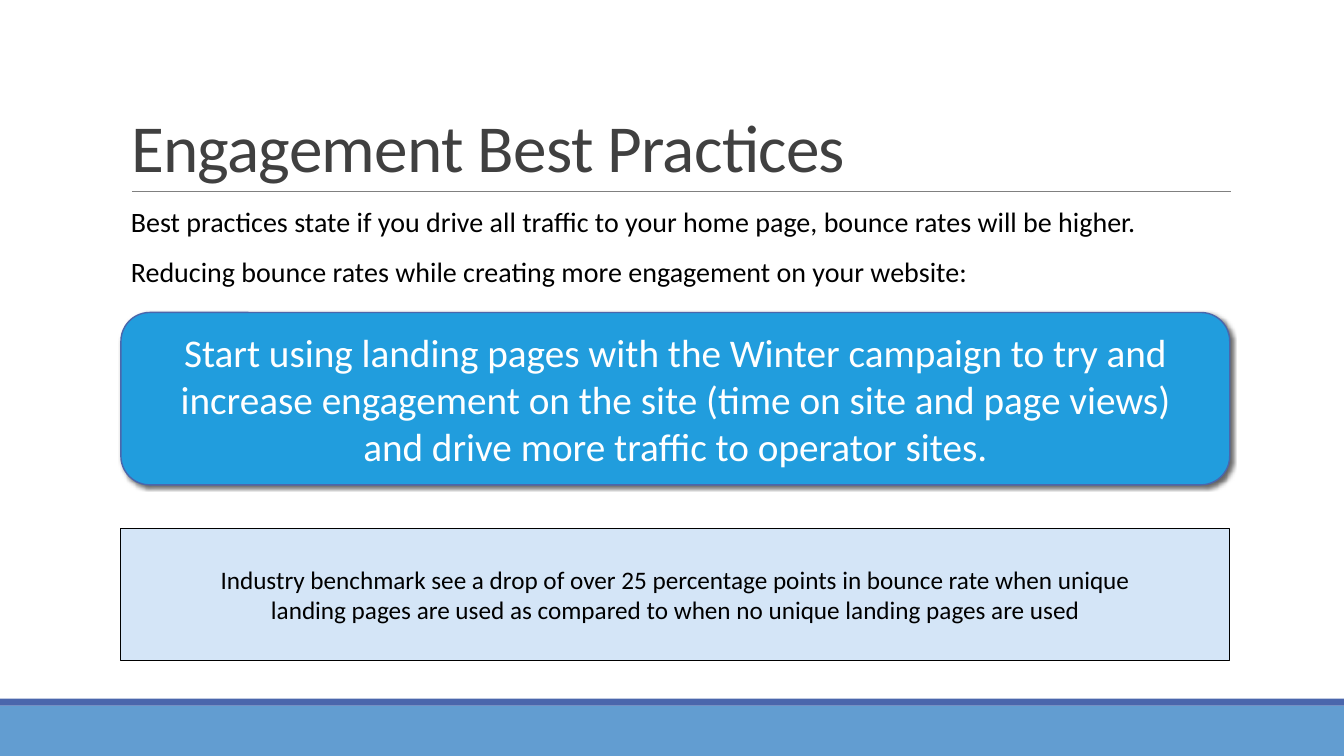
from dataclasses import dataclass, field

from lxml import etree
from pptx import Presentation
from pptx.dml.color import RGBColor
from pptx.enum import shapes, text
from pptx.oxml import ns
from pptx.util import Pt

FONT = "Calibri"
LEFT, WIDTH = 86.4, 792
SLIDE_WIDTH, SLIDE_HEIGHT = 960, 540
TITLE_ONLY_LAYOUT = 5


@dataclass
class TextBlock:
    paragraphs: list[str]
    size: float
    color: str
    frame: dict = field(default_factory=dict)
    paragraph: dict = field(default_factory=dict)


@dataclass
class Panel:
    preset: int
    left: float
    top: float
    width: float
    height: float
    fill: str
    line: str | None = None
    line_width: float = 0
    block: TextBlock | None = None


CENTERED = {"alignment": text.PP_ALIGN.CENTER}
MIDDLE = {"vertical_anchor": text.MSO_ANCHOR.MIDDLE}

TITLE = TextBlock(
    ["Engagement Best Practices"], 48, "404040",
    {"vertical_anchor": text.MSO_ANCHOR.BOTTOM},
    {"alignment": text.PP_ALIGN.LEFT, "line_spacing": 0.85},
)
INTRODUCTION = TextBlock(
    [
        "Best practices state if you drive all traffic to your home page, bounce rates will be higher.",
        "Reducing bounce rates while creating more engagement on your website:",
    ],
    20, "000000",
    {"vertical_anchor": text.MSO_ANCHOR.TOP},
    {"line_spacing": 0.9, "space_after": Pt(2)},
)
BENCHMARK = TextBlock(
    [
        "Industry benchmark see a drop of over 25 percentage points in bounce rate when unique "
        "landing pages are used as compared to when no unique landing pages are used"
    ],
    18, "000000",
    MIDDLE | {"margin_left": Pt(50), "margin_right": Pt(50)},
    CENTERED,
)
RECOMMENDATION = TextBlock(
    [
        "Start using landing pages with the Winter campaign to try and increase engagement on the site "
        "(time on site and page views) and drive more traffic to operator sites."
    ],
    28, "FFFFFF", MIDDLE | {"margin_left": Pt(13), "margin_right": Pt(13)}, CENTERED,
)

RECTANGLE = shapes.MSO_SHAPE.RECTANGLE
FOOTER_PANELS = [
    Panel(RECTANGLE, 0, 504, SLIDE_WIDTH, 36, "629DD1"),
    Panel(RECTANGLE, 0, 499, SLIDE_WIDTH, 5, "4A66AC"),
]
BENCHMARK_PANEL = Panel(RECTANGLE, LEFT, 377.3, WIDTH, 94.3, "D4E5F7", "000000", 0.75, BENCHMARK)
RECOMMENDATION_PANEL = Panel(
    shapes.MSO_SHAPE.ROUNDED_RECTANGLE, LEFT, 223.2, WIDTH, 123.1,
    "219DDD", "4A66AC", 1, RECOMMENDATION,
)


def rgb(color: str) -> RGBColor:
    return RGBColor.from_string(color)


def apply_format(target, values: dict) -> None:
    for name, value in values.items():
        setattr(target, name, value)


def write_text(shape, block: TextBlock) -> None:
    frame = shape.text_frame
    apply_format(frame, {"word_wrap": True, "auto_size": text.MSO_AUTO_SIZE.NONE} | block.frame)
    for index, content in enumerate(block.paragraphs):
        paragraph = frame.add_paragraph() if index else frame.paragraphs[0]
        apply_format(paragraph, block.paragraph)
        if index:
            paragraph.space_before = Pt(12)
        run = paragraph.add_run()
        run.text = content
        apply_format(run.font, {"name": FONT, "size": Pt(block.size)})
        run.font.color.rgb = rgb(block.color)


def add_panel(slide, panel: Panel):
    bounds = map(Pt, (panel.left, panel.top, panel.width, panel.height))
    shape = slide.shapes.add_shape(panel.preset, *bounds)
    shape.fill.solid()
    shape.fill.fore_color.rgb = rgb(panel.fill)
    if panel.line:
        shape.line.color.rgb = rgb(panel.line)
        shape.line.width = Pt(panel.line_width)
    else:
        shape.line.fill.background()
    shape.shadow.inherit = False
    if panel.block:
        write_text(shape, panel.block)
    return shape


def add_shadow(shape) -> None:
    effects = shape._element.spPr.find(ns.qn("a:effectLst"))
    shadow = etree.SubElement(
        effects, ns.qn("a:outerShdw"),
        blurRad=str(Pt(3)), dist=str(Pt(2)), dir=str(45 * 60000), rotWithShape="0",
    )
    color = etree.SubElement(shadow, ns.qn("a:srgbClr"), val="000000")
    etree.SubElement(color, ns.qn("a:alpha"), val="60000")


def add_title(slide) -> None:
    title = slide.shapes.title
    apply_format(title, {"left": Pt(LEFT), "top": Pt(22.3), "width": Pt(WIDTH), "height": Pt(114.5)})
    write_text(title, TITLE)
    title.text_frame.paragraphs[0].runs[0].font._element.set("spc", "-50")


def add_title_rule(slide) -> None:
    rule = slide.shapes.add_connector(
        shapes.MSO_CONNECTOR.STRAIGHT, Pt(94.3), Pt(136.8), Pt(879), Pt(136.8)
    )
    rule.line.color.rgb = rgb("808080")
    rule.line.width = Pt(0.5)
    etree.SubElement(rule._element.spPr, ns.qn("a:effectLst"))


def main() -> None:
    presentation = Presentation()
    presentation.slide_width = Pt(SLIDE_WIDTH)
    presentation.slide_height = Pt(SLIDE_HEIGHT)
    slide = presentation.slides.add_slide(presentation.slide_layouts[TITLE_ONLY_LAYOUT])
    for panel in FOOTER_PANELS:
        add_panel(slide, panel)
    add_title_rule(slide)
    add_title(slide)
    introduction = slide.shapes.add_textbox(Pt(LEFT), Pt(145.4), Pt(WIDTH), Pt(77.8))
    write_text(introduction, INTRODUCTION)
    add_panel(slide, BENCHMARK_PANEL)
    add_shadow(add_panel(slide, RECOMMENDATION_PANEL))
    presentation.save("out.pptx")


if __name__ == "__main__":
    main()
